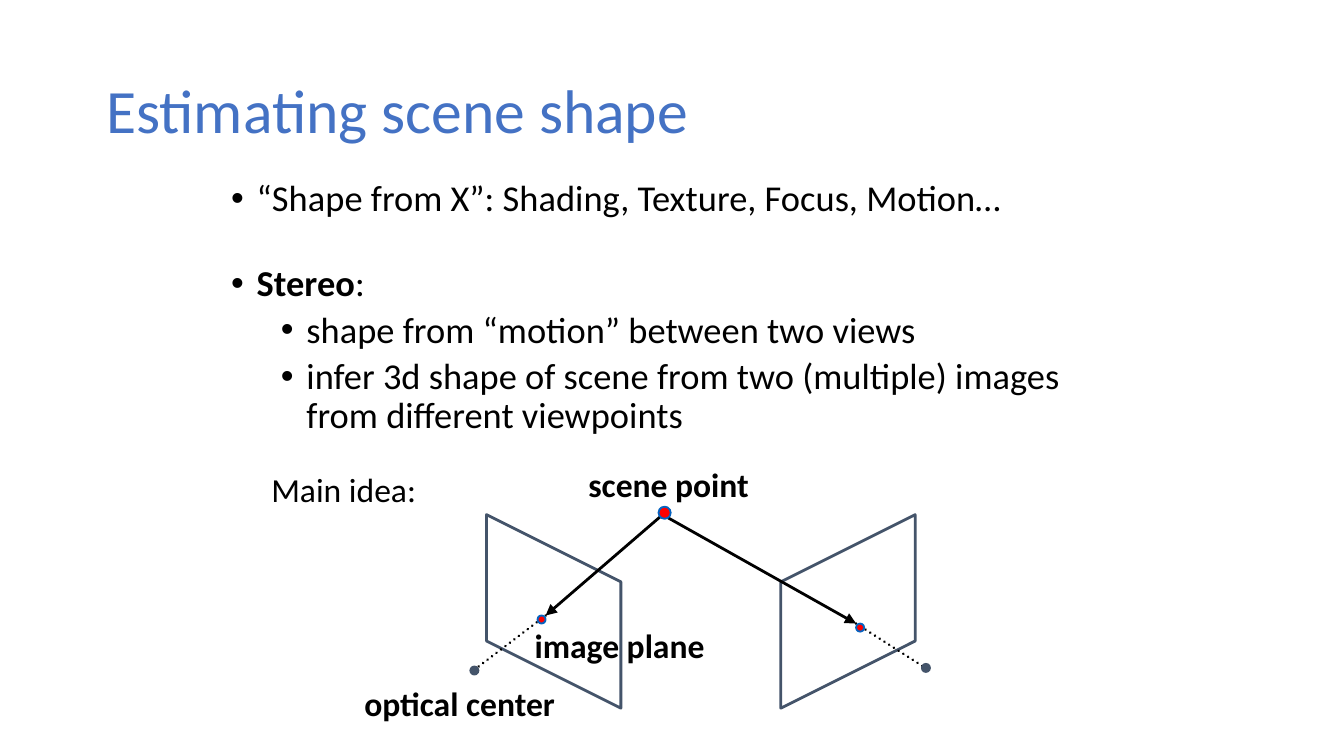
from pptx import Presentation
from pptx import util as u
from pptx.dml.color import RGBColor
from pptx.enum import dml, shapes, text
from pptx.oxml.ns import qn
from lxml import etree

COLORS = {
    "title": "4472C4",
    "text": "000000",
    "slate": "44546A",
    "point": "FF0000",
    "point_edge": "0563C1",
}
FONT = "Calibri"


def color(name):
    return RGBColor.from_string(COLORS[name])


def place(shape, left, top, width, height):
    shape.left, shape.top = u.Inches(left), u.Inches(top)
    shape.width, shape.height = u.Inches(width), u.Inches(height)


def set_font(paragraph, size, color_name="text", bold=False):
    font = paragraph.font
    font.name, font.size, font.bold = FONT, u.Pt(size), bold
    font.color.rgb = color(color_name)


def fill_title(title, words):
    place(title, 0.69, 0.3, 8.62, 1.09)
    frame = title.text_frame
    frame.text = words
    frame.auto_size = text.MSO_AUTO_SIZE.NONE
    frame.vertical_anchor = text.MSO_ANCHOR.MIDDLE
    paragraph = frame.paragraphs[0]
    paragraph.alignment = text.PP_ALIGN.LEFT
    paragraph.line_spacing = 0.9
    set_font(paragraph, 33, "title")


def add_bullet(paragraph, runs, level, space_before):
    """Fill a paragraph with (words, bold) runs behind a hanging bullet."""
    paragraph.level = level
    properties = paragraph._p.get_or_add_pPr()
    properties.set("marL", str(u.Inches(0.56 if level else 0.19)))
    properties.set("indent", str(u.Inches(-0.19)))
    etree.SubElement(properties, qn("a:buFont"), typeface="Arial")
    etree.SubElement(properties, qn("a:buChar"), char="•")
    paragraph.line_spacing = 0.9
    paragraph.space_before = u.Pt(space_before)
    set_font(paragraph, 19.5)
    for words, bold in runs:
        run = paragraph.add_run()
        run.text = words
        if bold:
            run.font.bold = True


def fill_body(body):
    place(body, 1.62, 1.29, 6.75, 3.71)
    frame = body.text_frame
    frame.auto_size = text.MSO_AUTO_SIZE.NONE
    bullets = [
        ([("“Shape from X”: Shading, Texture, Focus, Motion…", False)], 0, 0),
        ([("Stereo", True), (":", False)], 0, 24.5),
        ([("shape from “motion” between two views", False)], 1, 3.8),
        ([("infer 3d shape of scene from two (multiple) images "
           "from different viewpoints", False)], 1, 3.8),
    ]
    for index, (runs, level, space_before) in enumerate(bullets):
        paragraph = frame.add_paragraph() if index else frame.paragraphs[0]
        add_bullet(paragraph, runs, level, space_before)


def add_image_plane(slide, outer, inner):
    """Draw a plane whose outer edge stands half an inch above its inner edge."""
    corners = [(outer, 3.83), (outer, 4.77), (inner, 5.27), (inner, 4.33)]
    points = [(u.Inches(x), u.Inches(y)) for x, y in corners]
    builder = slide.shapes.build_freeform(*points[0])
    builder.add_line_segments(points[1:], close=True)
    plane = builder.convert_to_shape()
    plane.shadow.inherit = False
    plane.fill.background()
    plane.line.color.rgb = color("slate")
    plane.line.width = u.Pt(1.5)


def add_ray(slide, start, end, dotted=False):
    """Draw a dotted line, or a solid one with an arrowhead at its end."""
    ends = [u.Inches(value) for value in start + end]
    ray = slide.shapes.add_connector(shapes.MSO_CONNECTOR.STRAIGHT, *ends)
    ray.line.color.rgb = color("text")
    ray.line.width = u.Pt(1.5)
    outline = ray.line._get_or_add_ln()
    if dotted:
        ray.line.dash_style = dml.MSO_LINE.ROUND_DOT
        outline.set("cap", "rnd")
    else:
        etree.SubElement(outline, qn("a:tailEnd"), type="triangle")
    etree.SubElement(ray._element.spPr, qn("a:effectLst"))


def add_dot(slide, left, top, size, fill, edge):
    dot = slide.shapes.add_shape(
        shapes.MSO_SHAPE.OVAL, *[u.Inches(value) for value in (left, top, size, size)])
    dot.shadow.inherit = False
    dot.fill.solid()
    dot.fill.fore_color.rgb = color(fill)
    dot.line.color.rgb = color(edge)
    dot.line.width = u.Pt(1)


def add_label(slide, words, left, top, width, centered=True):
    """Add a bold centred diagram label, or a plain left-aligned one."""
    box = slide.shapes.add_textbox(
        *[u.Inches(value) for value in (left, top, width, 0.4)])
    frame = box.text_frame
    frame.text = words
    frame.word_wrap = not centered
    frame.auto_size = text.MSO_AUTO_SIZE.SHAPE_TO_FIT_TEXT
    paragraph = frame.paragraphs[0]
    if centered:
        frame.vertical_anchor = text.MSO_ANCHOR.MIDDLE
        paragraph.alignment = text.PP_ALIGN.CENTER
    set_font(paragraph, 18, bold=centered)


def add_stereo_diagram(slide):
    scene_point = (4.93, 3.83)
    add_image_plane(slide, 3.62, 4.62)
    add_image_plane(slide, 6.81, 5.81)

    views = [((4.06, 4.58), (3.56, 4.96)), ((6.37, 4.64), (6.87, 4.96))]
    for image_point, optical_center in views:
        add_ray(slide, image_point, optical_center, dotted=True)
        add_ray(slide, scene_point, image_point)

    for left, top in [(3.5, 4.96), (6.86, 4.94)]:
        add_dot(slide, left, top, 0.06, "slate", "slate")
    for left, top, size in [(4, 4.58, 0.06), (6.37, 4.64, 0.06), (4.9, 3.77, 0.09)]:
        add_dot(slide, left, top, size, "point", "point_edge")

    add_label(slide, "scene point", 4.27, 3.4, 1.41)
    add_label(slide, "optical center", 2.6, 5.03, 1.64)
    add_label(slide, "image plane", 3.87, 4.6, 1.48)
    add_label(slide, "Main idea:", 1.92, 3.44, 2.01, centered=False)


def main():
    presentation = Presentation()
    presentation.slide_width = u.Inches(10)
    presentation.slide_height = presentation.slide_width * 9 // 16
    slide = presentation.slides.add_slide(presentation.slide_layouts[1])
    fill_title(slide.shapes.title, "Estimating scene shape")
    fill_body(slide.placeholders[1])
    add_stereo_diagram(slide)
    presentation.save("out.pptx")


if __name__ == "__main__":
    main()
